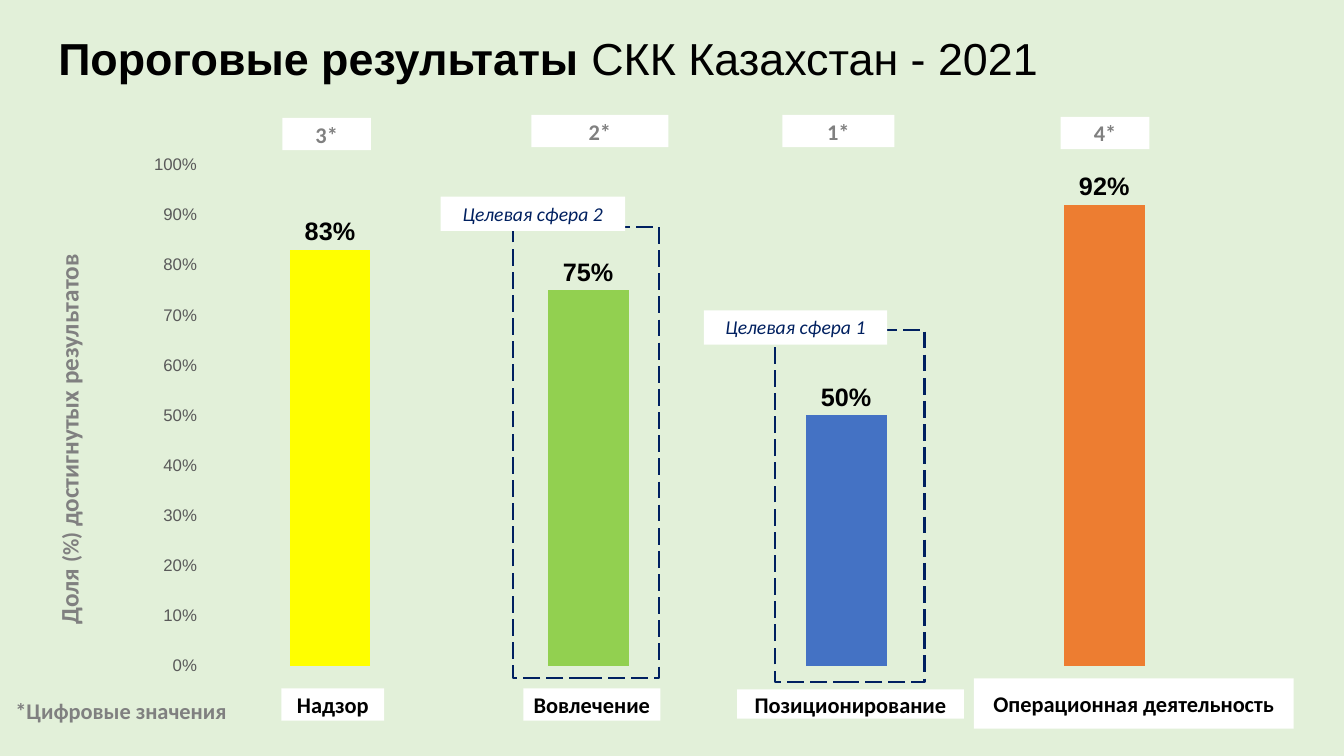
import pptx
import pptx.chart.data
import pptx.dml.color
import pptx.enum.chart
import pptx.enum.dml
import pptx.enum.shapes
import pptx.enum.text
import pptx.oxml
import pptx.oxml.ns
import pptx.util

Inches = pptx.util.Inches
Pt = pptx.util.Pt
RGB = pptx.dml.color.RGBColor
ANCHOR = pptx.enum.text.MSO_ANCHOR
ALIGN = pptx.enum.text.PP_ALIGN

MINT = RGB(0xE2, 0xF0, 0xD9)
WHITE = RGB(0xFF, 0xFF, 0xFF)
BLACK = RGB(0, 0, 0)
GRAY = RGB(0x80, 0x80, 0x80)
AXIS_GRAY = RGB(0x59, 0x59, 0x59)
NAVY = RGB(0x00, 0x20, 0x60)
YELLOW = RGB(0xFF, 0xFF, 0x00)
GREEN = RGB(0x92, 0xD0, 0x50)
BLUE = RGB(0x44, 0x72, 0xC4)
ORANGE = RGB(0xED, 0x7D, 0x31)

SPHERES = [
    ("Надзор", 0.83, YELLOW, "3*", (2.8, 1.17, 0.88, 0.32), (2.79, 6.83, 1.02, 0.32)),
    ("Вовлечение", 0.75, GREEN, "2*", (5.27, 1.14, 1.36, 0.32), (5.19, 6.83, 1.36, 0.32)),
    ("Позиционирование", 0.5, BLUE, "1*", (7.76, 1.14, 1.11, 0.32), (7.31, 6.84, 2.25, 0.29)),
    ("Операционная деятельность", 0.92, ORANGE, "4*", (10.52, 1.16, 0.88, 0.32), (9.66, 6.73, 3.17, 0.5)),
]
TARGETS = [
    ("Целевая сфера 1", (7.69, 3.27, 1.48, 3.5), (-0.71, -0.19, 1.82, 0.34)),
    ("Целевая сфера 2", (5.09, 2.25, 1.45, 4.48), (-0.72, -0.3, 1.83, 0.34)),
]


def set_font(font, size, color, name="Calibri", bold=False, italic=False):
    font.size = Pt(size)
    font.name = name
    font.bold = bold
    font.italic = italic
    font.color.rgb = color


def add_run(p, text, **style):
    r = p.add_run()
    r.text = text
    set_font(r.font, **style)


def add_text(sp, text, align=ALIGN.CENTER, anchor=ANCHOR.MIDDLE, margin=0.05, **style):
    tf = sp.text_frame
    tf.word_wrap = True
    tf.vertical_anchor = anchor
    tf.margin_left = tf.margin_right = Inches(margin)
    p = tf.paragraphs[0]
    p.alignment = align
    add_run(p, text, **style)
    return p


def add_textbox(s, box):
    return s.shapes.add_textbox(*map(Inches, box))


def add_rect(s, box, fill=None):
    sp = s.shapes.add_shape(pptx.enum.shapes.MSO_SHAPE.RECTANGLE, *map(Inches, box))
    sp.shadow.inherit = False
    sp.line.fill.background()
    if fill is None:
        sp.fill.background()
    else:
        sp.fill.solid()
        sp.fill.fore_color.rgb = fill
    return sp


def add_title(s, box):
    style = dict(size=32, color=BLACK, name="Arial")
    p = add_text(add_textbox(s, box), "Пороговые результаты ", align=ALIGN.LEFT,
                 margin=0.1, bold=True, **style)
    p.line_spacing = 0.9
    add_run(p, "СКК Казахстан - 2021", **style)


def add_axis_title(s, box):
    sp = add_textbox(s, box)
    style = dict(color=GRAY, bold=True)
    p = add_text(sp, "Доля ", anchor=ANCHOR.TOP, size=18, **style)
    add_run(p, "(%)", size=16, **style)
    add_run(p, " достигнутых результатов", size=18, **style)
    sp.text_frame._txBody.bodyPr.set("vert", "vert270")


def set_plot_layout(chart, x, y, w, h):
    area = chart.element.find(".//" + pptx.oxml.ns.qn("c:plotArea"))
    for old in area.findall(pptx.oxml.ns.qn("c:layout")):
        area.remove(old)
    sizes = "".join(f'<c:{k} val="{v}"/>' for k, v in zip("xywh", (x, y, w, h)))
    area.insert(0, pptx.oxml.parse_xml(
        f'<c:layout {pptx.oxml.ns.nsdecls("c")}><c:manualLayout>'
        '<c:layoutTarget val="inner"/><c:xMode val="edge"/><c:yMode val="edge"/>'
        f'{sizes}</c:manualLayout></c:layout>'))


def add_result_chart(s, box):
    data = pptx.chart.data.CategoryChartData(number_format="0%")
    data.categories = [str(i + 1) for i in range(len(SPHERES))]
    data.add_series("Series 1", [sphere[1] for sphere in SPHERES])
    chart = s.shapes.add_chart(pptx.enum.chart.XL_CHART_TYPE.COLUMN_CLUSTERED,
                               *map(Inches, box), data).chart
    chart.has_legend = False
    chart.has_title = False
    set_font(chart.font, 10, BLACK, name="Arial")
    chart.category_axis.visible = False

    axis = chart.value_axis
    axis.minimum_scale = 0
    axis.maximum_scale = 1
    axis.major_unit = 0.1
    axis.has_major_gridlines = False
    axis.major_tick_mark = axis.minor_tick_mark = pptx.enum.chart.XL_TICK_MARK.NONE
    axis.format.line.fill.background()
    axis.tick_labels.number_format = "0%"
    axis.tick_labels.number_format_is_linked = False
    set_font(axis.tick_labels.font, 12, AXIS_GRAY, name="Arial")

    plot = chart.plots[0]
    plot.vary_by_categories = False
    plot.gap_width = 219
    plot.overlap = -27
    series = plot.series[0]
    series.format.fill.solid()
    series.format.fill.fore_color.rgb = BLUE
    for i, sphere in enumerate(SPHERES):
        fill = series.points[i].format.fill
        fill.solid()
        fill.fore_color.rgb = sphere[2]

    labels = series.data_labels
    labels.show_value = True
    labels.number_format = "0%"
    labels.number_format_is_linked = False
    labels.position = pptx.enum.chart.XL_LABEL_POSITION.OUTSIDE_END
    set_font(labels.font, 18, BLACK, name="Arial", bold=True)
    set_plot_layout(chart, 0.07, 0.04, 0.915, 0.919)


def add_target(s, box, label, tag):
    frame = add_rect(s, box)
    frame.line.color.rgb = NAVY
    frame.line.width = Pt(1.5)
    frame.line.dash_style = pptx.enum.dml.MSO_LINE.LONG_DASH
    dx, dy, w, h = tag
    sp = add_rect(s, (box[0] + dx, box[1] + dy, w, h), WHITE)
    add_text(sp, label, anchor=ANCHOR.TOP, size=14, color=NAVY, italic=True)


def main():
    prs = pptx.Presentation()
    prs.slide_width = Inches(13.33)
    prs.slide_height = Inches(7.5)
    s = prs.slides.add_slide(prs.slide_layouts[6])
    s.background.fill.solid()
    s.background.fill.fore_color.rgb = MINT

    add_title(s, (0.48, 0.09, 12.78, 1.02))
    add_axis_title(s, (0.48, 2.36, 0.5, 4))
    add_text(add_textbox(s, (0, 6.87, 2.4, 0.37)), "*Цифровые значения",
             anchor=ANCHOR.TOP, size=16, color=GRAY, bold=True)
    add_result_chart(s, (1.21, 1.42, 11.19, 5.41))
    for name, _, _, rank, rank_box, name_box in SPHERES:
        add_text(add_rect(s, rank_box, WHITE), rank, size=16, color=GRAY, bold=True)
        add_text(add_rect(s, name_box, WHITE), name, size=16, color=BLACK, bold=True)
    for label, box, tag in TARGETS:
        add_target(s, box, label, tag)
    prs.save("out.pptx")


if __name__ == "__main__":
    main()
